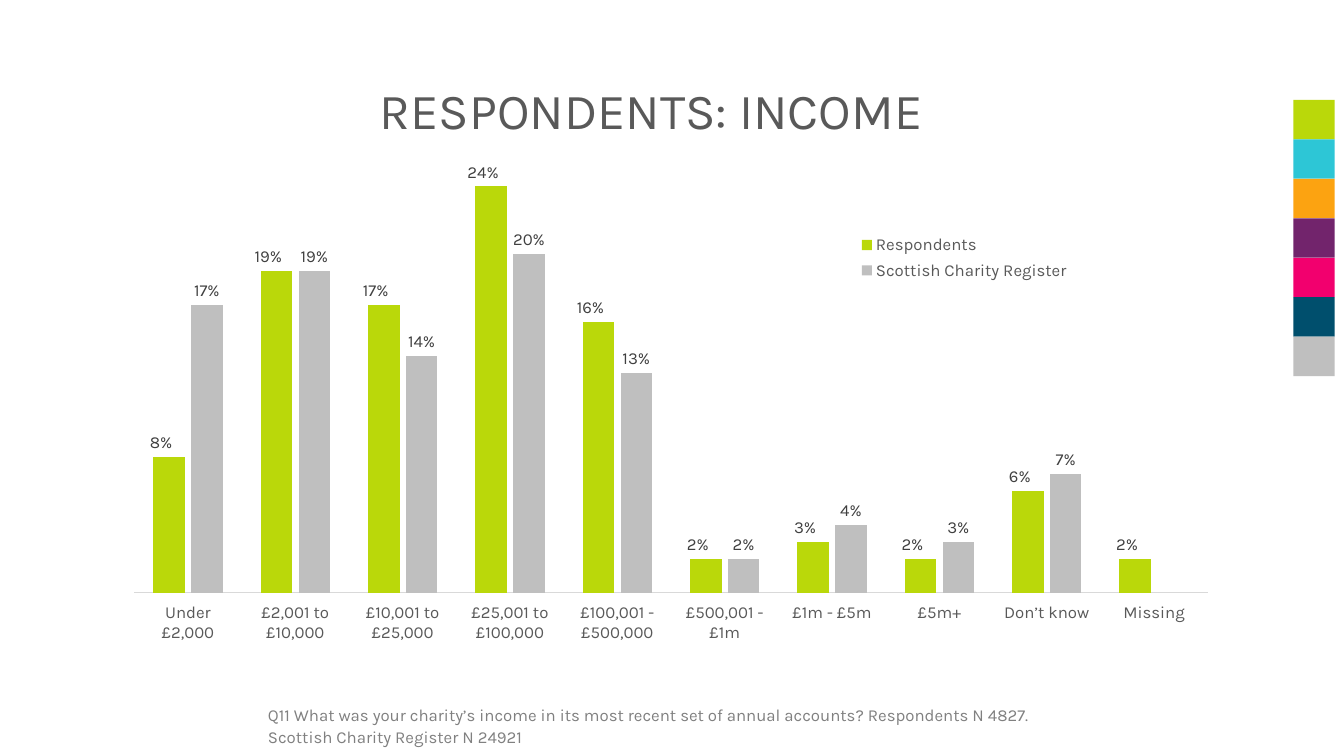
"""Build the slide on respondents by income."""
from lxml.etree import SubElement
from pptx import Presentation
from pptx.chart.data import CategoryChartData as Data
from pptx.dml.color import RGBColor as RGB
from pptx.enum.chart import XL_CHART_TYPE as Kind
from pptx.enum.chart import XL_LABEL_POSITION as Spot
from pptx.enum.chart import XL_LEGEND_POSITION as Side
from pptx.enum.chart import XL_TICK_LABEL_POSITION as Tick
from pptx.enum.chart import XL_TICK_MARK as Mark
from pptx.enum.shapes import MSO_SHAPE as Shape
from pptx.enum.text import MSO_ANCHOR as Anchor
from pptx.oxml.ns import qn
from pptx.util import Pt

TITLE = "RESPONDENTS: INCOME"
NOTE = ("Q11 What was your charity’s income in its most recent set of annual "
        "accounts? Respondents N 4827. Scottish Charity Register N 24921")
BANDS = ["Under £2,000", "£2,001 to £10,000", "£10,001 to £25,000",
         "£25,001 to £100,000", "£100,001 - £500,000", "£500,001 - £1m",
         "£1m - £5m", "£5m+", "Don’t know", "Missing"]
SERIES = [
    ("Respondents", "lime", "0%_M_i",
     [0.08, 0.19, 0.17, 0.24, 0.16, 0.02, 0.03, 0.02, 0.06, 0.02]),
    ("Scottish Charity Register", "silver", "0%",
     [0.17, 0.19, 0.14, 0.2, 0.13, 0.02, 0.04, 0.03, 0.07, None]),
]
HEX = {"lime": "BAD80A", "aqua": "2DC6D6", "amber": "FCA311",
       "plum": "72246C", "pink": "F2006E", "navy": "004F6D",
       "silver": "BFBFBF", "title": "595959", "label": "404040",
       "note": "808080", "axis": "D9D9D9"}
STRIP = ["lime", "aqua", "amber", "plum", "pink", "navy", "silver"]
FACE = "Karla"


def color(name):
    """Return the named colour."""
    return RGB.from_string(HEX[name])


def style(font, size, name):
    """Set face, size and colour of a font."""
    font.name, font.size = FACE, Pt(size)
    font.color.rgb = color(name)


def write(slide, box, text, size, name, space, after=0, anchor=Anchor.TOP):
    """Add a wrapped text box with one run."""
    frame = slide.shapes.add_textbox(*map(Pt, box)).text_frame
    frame.word_wrap, frame.vertical_anchor = True, anchor
    para = frame.paragraphs[0]
    para.line_spacing, para.space_after = space, Pt(after)
    run = para.add_run()
    run.text = text
    style(run.font, size, name)


def place(node, index, box, inner=False):
    """Give a chart part a fixed place, in shares of the chart."""
    for old in node.findall(qn("c:layout")):
        node.remove(old)
    layout = node.makeelement(qn("c:layout"), {})
    node.insert(index, layout)
    manual = SubElement(layout, qn("c:manualLayout"))
    rows = [("layoutTarget", "inner")] if inner else []
    rows += [("xMode", "edge"), ("yMode", "edge"), *zip("xywh", box)]
    for tag, val in rows:
        SubElement(manual, qn("c:" + tag), val=str(val))


def add_bars(slide):
    """Add the clustered columns."""
    data = Data()
    data.categories = BANDS
    for name, _, _, vals in SERIES:
        data.add_series(name, vals)
    box = map(Pt, (45.4, 109.4, 856.8, 364.3))
    chart = slide.shapes.add_chart(Kind.COLUMN_CLUSTERED, *box, data).chart
    style(chart.font, 12, "title")
    chart.has_title = False
    chart.has_legend = True
    chart.legend.position = Side.RIGHT
    chart.legend.include_in_layout = False
    style(chart.legend.font, 12, "title")

    axis = chart.category_axis
    axis.major_tick_mark = axis.minor_tick_mark = Mark.NONE
    axis.tick_label_position = Tick.LOW
    axis.format.line.color.rgb = color("axis")
    axis.format.line.width = Pt(0.75)
    style(axis.tick_labels.font, 12, "title")
    scale = chart.value_axis
    scale.minimum_scale, scale.maximum_scale = 0, 0.25
    scale.has_major_gridlines = scale.visible = False

    plot = chart.plots[0]
    plot.gap_width, plot.overlap = 120, -20
    plot.vary_by_categories = False
    for bars, (_, name, form, _) in zip(plot.series, SERIES):
        bars.format.fill.solid()
        bars.format.fill.fore_color.rgb = color(name)
        tags = bars.data_labels
        tags.show_value = True
        tags.number_format, tags.number_format_is_linked = form, False
        tags.position = Spot.OUTSIDE_END
        style(tags.font, 12, "label")

    root = chart.element
    area = root.find(".//" + qn("c:plotArea"))
    place(area, 0, (0.059, 0.032, 0.895, 0.83), True)
    place(root.find(".//" + qn("c:legend")), 1, (0.656, 0.15, 0.19, 0.11))


def main():
    """Build and save the slide."""
    deck = Presentation()
    deck.slide_width, deck.slide_height = Pt(960), Pt(540)
    slide = deck.slides.add_slide(deck.slide_layouts[6])
    step = 28.2
    for row, name in enumerate(STRIP):
        box = map(Pt, (923.8, 71.3 + row * step, 29.5, step))
        tile = slide.shapes.add_shape(Shape.RECTANGLE, *box)
        tile.shadow.inherit = False
        tile.fill.solid()
        tile.fill.fore_color.rgb = color(name)
        tile.line.fill.background()
    write(slide, (264.2, 28.8, 434.9, 104.4), TITLE, 36, "title", 0.9,
          anchor=Anchor.MIDDLE)
    add_bars(slide)
    write(slide, (184.3, 499, 560.2, 38.2), NOTE, 12, "note", 1.07, 8)
    deck.save("out.pptx")


if __name__ == "__main__":
    main()
